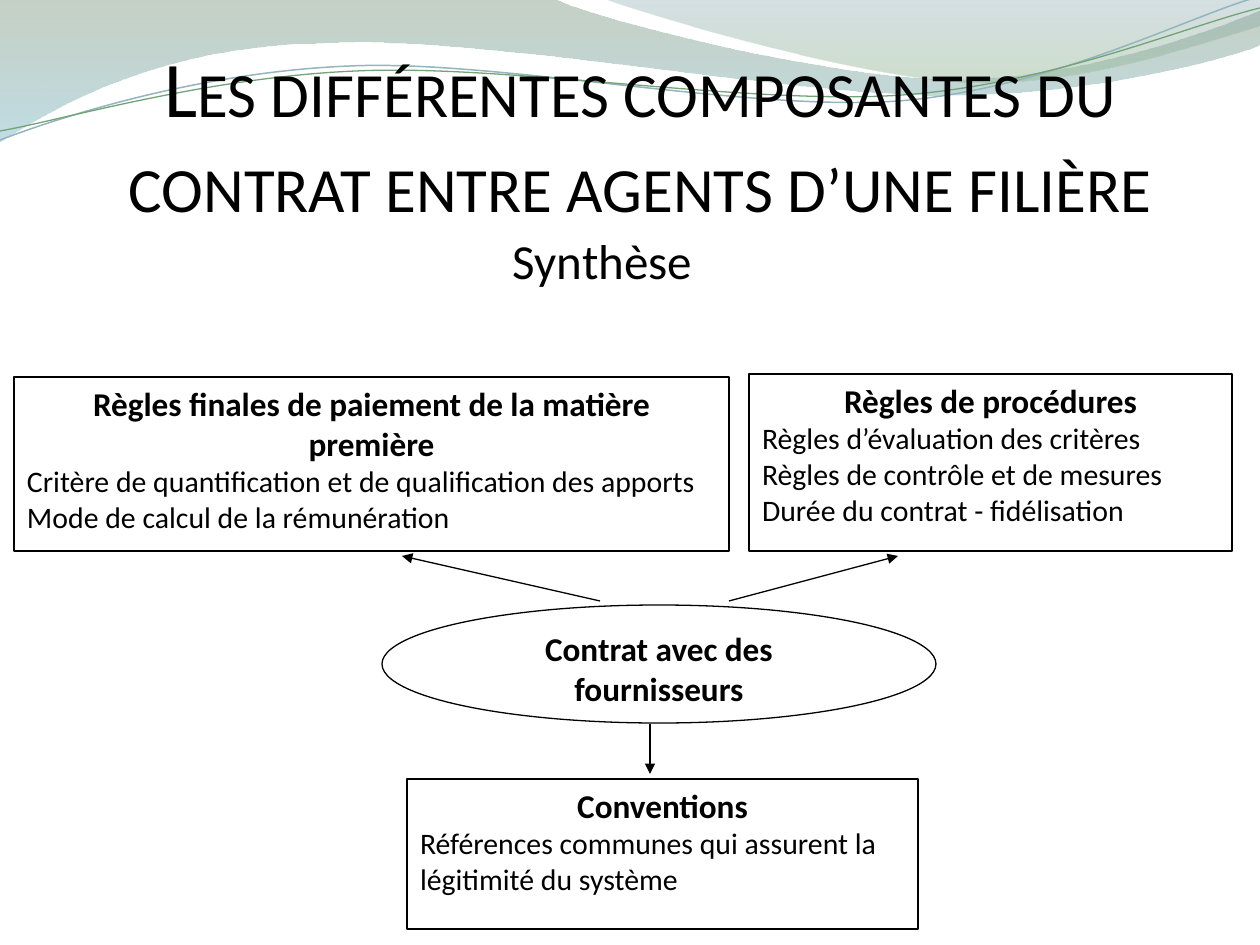
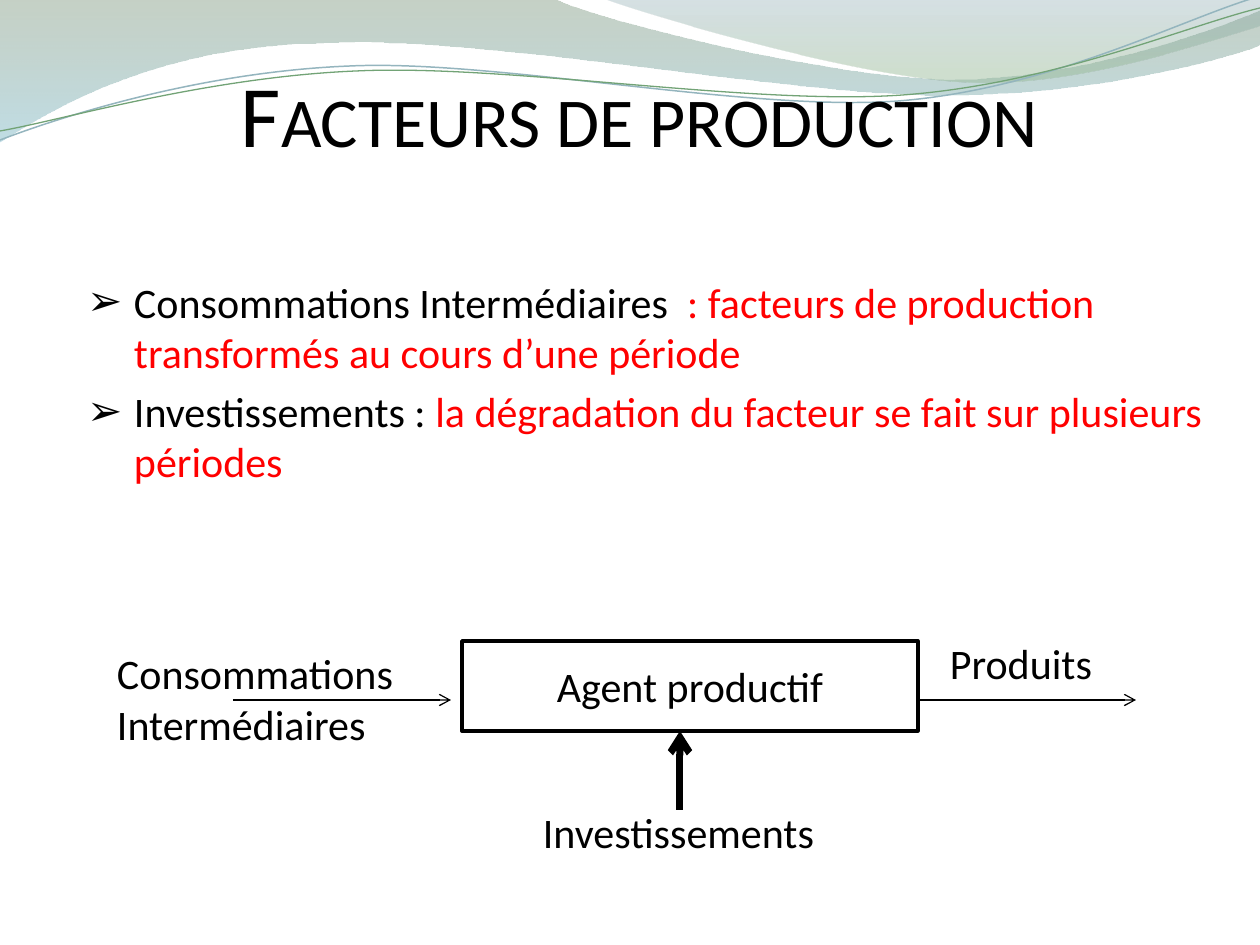
from lxml import etree
from pptx import Presentation
from pptx.dml.color import RGBColor
from pptx.enum.shapes import MSO_CONNECTOR, MSO_SHAPE
from pptx.enum.text import MSO_ANCHOR, PP_ALIGN
from pptx.oxml.ns import qn
from pptx.util import Emu, Pt

PX = 914400 / 126
SLIDE_SIZE = (1260, 945)
FONT = "Calibri"
BLACK = RGBColor(0x00, 0x00, 0x00)
WHITE = RGBColor(0xFF, 0xFF, 0xFF)
RED = RGBColor(0xFF, 0x00, 0x00)
SAGE = RGBColor(0x80, 0x99, 0x80)
AQUA = RGBColor(0x8D, 0xC1, 0xCF)
SLATE = RGBColor(0x77, 0x9B, 0xA4)
LEAF = RGBColor(0x96, 0xB9, 0x96)
BLUE_LINE = RGBColor(0x94, 0xB5, 0xBE)
GREEN_LINE = RGBColor(0x72, 0xA3, 0x76)
LEFT, CENTER = PP_ALIGN.LEFT, PP_ALIGN.CENTER
TOP, MIDDLE, BOTTOM = MSO_ANCHOR.TOP, MSO_ANCHOR.MIDDLE, MSO_ANCHOR.BOTTOM
RECTANGLE, OVAL = MSO_SHAPE.RECTANGLE, MSO_SHAPE.OVAL
STRAIGHT = MSO_CONNECTOR.STRAIGHT
INSETS = (13, 6, 13, 6)

WAVES = [
    ([[(0, 0)], [(554, -1)],
      [(600, 21), (837, 79), (955, 79)], [(1075, 79), (1207, 33), (1260, 11)],
      [(1261, 45)],
      [(1239, 55), (1096, 96), (940, 95)], [(784, 95), (481, 35), (324, 43)],
      [(163, 45), (58, 105), (-1, 142)]],
     [(0, SAGE, 45), (1, AQUA, 55)]),
    ([[(604, -1)],
      [(642, 14), (859, 78), (969, 82)], [(1079, 87), (1211, 40), (1260, 26)],
      [(1260, 0)]],
     [(0, SLATE, 30), (0.8, LEAF, 45)]),
]
STRANDS = [
    ([[(0, 140)],
      [(60, 117), (199, 72), (349, 66)], [(494, 59), (747, 112), (898, 101)],
      [(1050, 89), (1182, 19), (1257, -3)]], BLUE_LINE, 0.85),
    ([[(0, 131)],
      [(59, 121), (207, 77), (357, 71)], [(508, 64), (752, 106), (903, 95)],
      [(1053, 84), (1186, 26), (1260, 8)]], GREEN_LINE, 0.75),
]


def emu(*lengths):
    """Turn px into EMU."""
    return [Emu(round(length * PX)) for length in lengths]


def add_outline(page, segments, close):
    """Draw a freeform of straight and cubic segments without a shadow."""
    first, *others = [tuple(emu(*point)) for segment in segments for point in segment]
    builder = page.shapes.build_freeform(*first)
    builder.add_line_segments(others, close=close)
    shape = builder.convert_to_shape()
    shape.shadow.inherit = False
    strokes = iter(list(shape._element.iter(qn("a:lnTo"))))
    for segment in segments[1:]:
        stroke = next(strokes)
        if len(segment) == 3:
            stroke.tag = qn("a:cubicBezTo")
            for _ in range(2):
                extra = next(strokes)
                stroke.append(extra[0])
                extra.getparent().remove(extra)
    return shape


def add_wave_band(page):
    """Draw the wavy band and return its parts."""
    parts = []
    for segments, stops in WAVES:
        wave = add_outline(page, segments, True)
        wave.line.fill.background()
        wave.fill.gradient()
        wave.fill.gradient_angle = 270
        for stop, (position, color, _) in zip(wave.fill.gradient_stops, stops):
            stop.position = position
            stop.color.rgb = color
        for tint, (_, _, opacity) in zip(wave._element.iter(qn("a:srgbClr")), stops):
            etree.SubElement(tint, qn("a:alpha"), val=str(opacity * 1000))
        parts.append(wave)
    for segments, color, weight in STRANDS:
        strand = add_outline(page, segments, False)
        strand.fill.background()
        strand.line.color.rgb = color
        strand.line.width = Pt(weight)
        parts.append(strand)
    return parts


def dress_layout(layout, page):
    """Give the layout the wavy band, built on a page, in place of its placeholders."""
    for placeholder in list(layout.placeholders):
        layout.shapes._spTree.remove(placeholder._element)
    for part in add_wave_band(page):
        layout.shapes._spTree.append(part._element)


def write_text(shape, text, size=24, color=BLACK, bold=False, align=LEFT, anchor=TOP,
               insets=INSETS, small_caps=False):
    """Write one text, or a list of paragraphs of text or (words, color) spans."""
    frame = shape.text_frame
    frame.word_wrap = True
    frame.vertical_anchor = anchor
    (frame.margin_left, frame.margin_top,
     frame.margin_right, frame.margin_bottom) = emu(*insets)
    entries = [text] if isinstance(text, str) else text
    for index, entry in enumerate(entries):
        para = frame.paragraphs[0] if index == 0 else frame.add_paragraph()
        para.alignment = align
        spans = [(entry, color)] if isinstance(entry, str) else entry
        for words, span_color in spans:
            span = para.add_run()
            span.text = words
            span.font.name = FONT
            span.font.size = Pt(size)
            span.font.bold = bold
            span.font.color.rgb = span_color
            if small_caps:
                span._r.get_or_add_rPr().set("cap", "small")
    return frame


def add_label(page, box, text, **style):
    """Add a text box."""
    return write_text(page.shapes.add_textbox(*emu(*box)), text, **style)


def add_title(page, box, text, size):
    """Add the small-caps slide title."""
    add_label(page, box, text, size=size, align=CENTER, anchor=BOTTOM,
              insets=(0, 6, 0, 0), small_caps=True)


def add_node(page, box, text, kind=RECTANGLE, fill=WHITE, weight=0.75, **style):
    """Add an outlined shape with centred text."""
    node = page.shapes.add_shape(kind, *emu(*box))
    node.shadow.inherit = False
    if fill is None:
        node.fill.background()
    else:
        node.fill.solid()
        node.fill.fore_color.rgb = fill
    node.line.color.rgb = BLACK
    node.line.width = Pt(weight)
    return write_text(node, text, align=CENTER, **style)


def add_rule_card(page, box, heading, details):
    """Add a card with a bold heading above plain lines."""
    frame = add_node(page, box, [heading, *details], size=17)
    heading_font = frame.paragraphs[0].runs[0].font
    heading_font.size = Pt(19)
    heading_font.bold = True
    for para in frame.paragraphs[1:]:
        para.alignment = LEFT


def add_arrow(page, start, end, weight=0.75, head="triangle"):
    """Draw a black arrow."""
    arrow = page.shapes.add_connector(STRAIGHT, *emu(*start, *end))
    arrow.line.color.rgb = BLACK
    arrow.line.width = Pt(weight)
    properties = arrow._element.spPr
    etree.SubElement(properties.find(qn("a:ln")), qn("a:tailEnd"), type=head)
    etree.SubElement(properties, qn("a:effectLst"))


def add_bullets(page, box, entries):
    """Add the arrow-bulleted definitions."""
    frame = add_label(page, box, entries, insets=(13, 81, 13, 6))
    indent = emu(47)[0]
    for index, para in enumerate(frame.paragraphs):
        para.space_before = Pt(5 if index else 0)
        properties = para._p.get_or_add_pPr()
        properties.set("marL", str(indent))
        properties.set("indent", str(-indent))
        etree.SubElement(properties, qn("a:buFont"), typeface=FONT)
        etree.SubElement(properties, qn("a:buChar"), char="➢")


def add_contract_diagram(page, box):
    """Draw the contract, its two sets of rules and its conventions."""
    left, top, _, _ = box
    add_rule_card(page, (left, top + 3, 715, 174),
                  "Règles finales de paiement de la matière première",
                  ["Critère de quantification et de qualification des apports",
                   "Mode de calcul de la rémunération"])
    add_rule_card(page, (left + 735, top, 483, 177), "Règles de procédures",
                  ["Règles d’évaluation des critères",
                   "Règles de contrôle et de mesures",
                   "Durée du contrat - fidélisation"])
    add_rule_card(page, (left + 393, top + 405, 511, 150), "Conventions",
                  ["Références communes qui assurent la légitimité du système"])
    add_node(page, (left + 368, top + 231, 554, 118), "Contrat avec des fournisseurs",
             kind=OVAL, size=19, bold=True)
    for start, end in [((586, 227), (388, 182)), ((715, 227), (884, 182)),
                       ((636, 350), (636, 400))]:
        add_arrow(page, (left + start[0], top + start[1]), (left + end[0], top + end[1]))


def add_production_diagram(page, box):
    """Draw the productive agent with its inputs and output."""
    left, top, _, _ = box
    flow = top + 68
    add_node(page, (left + 358, top + 9, 456, 90), "Agent productif",
             fill=None, weight=2, anchor=MIDDLE)
    add_arrow(page, (left + 814, flow), (left + 1032, flow), head="arrow")
    add_label(page, (left + 833, top, 238, 63), "Produits")
    add_arrow(page, (left + 129, flow), (left + 347, flow), head="arrow")
    add_label(page, (left, top + 10, 328, 115), "Consommations Intermédiaires")
    add_arrow(page, (left + 576, top + 178), (left + 576, top + 99), weight=4, head="arrow")
    add_label(page, (left + 426, top + 169, 328, 63), "Investissements")


def build_contract_slide(page):
    """Build the summary of the contract's components."""
    add_title(page, (65, 26, 1150, 202),
              "Les différentes composantes du contrat entre agents d’une filière", 45)
    add_label(page, (500, 225, 268, 190), "Synthèse", size=28)
    add_contract_diagram(page, (14, 374, 1218, 555))


def build_factors_slide(page):
    """Build the slide on production factors."""
    add_title(page, (104, -33, 1071, 198), "Facteurs de production", 50)
    add_bullets(page, (74, 195, 1142, 348), [
        [("Consommations Intermédiaires  ", BLACK),
         (": facteurs de production transformés au cours d’une période", RED)],
        [("Investissements : ", BLACK),
         ("la dégradation du facteur se fait sur plusieurs périodes", RED)],
    ])
    add_production_diagram(page, (104, 632, 1071, 232))


def main():
    """Build and save the deck."""
    deck = Presentation()
    deck.slide_width, deck.slide_height = emu(*SLIDE_SIZE)
    blank = deck.slide_layouts[6]
    pages = [deck.slides.add_slide(blank) for _ in range(2)]
    dress_layout(blank, pages[0])
    build_contract_slide(pages[0])
    build_factors_slide(pages[1])
    deck.save("out.pptx")


if __name__ == "__main__":
    main()
